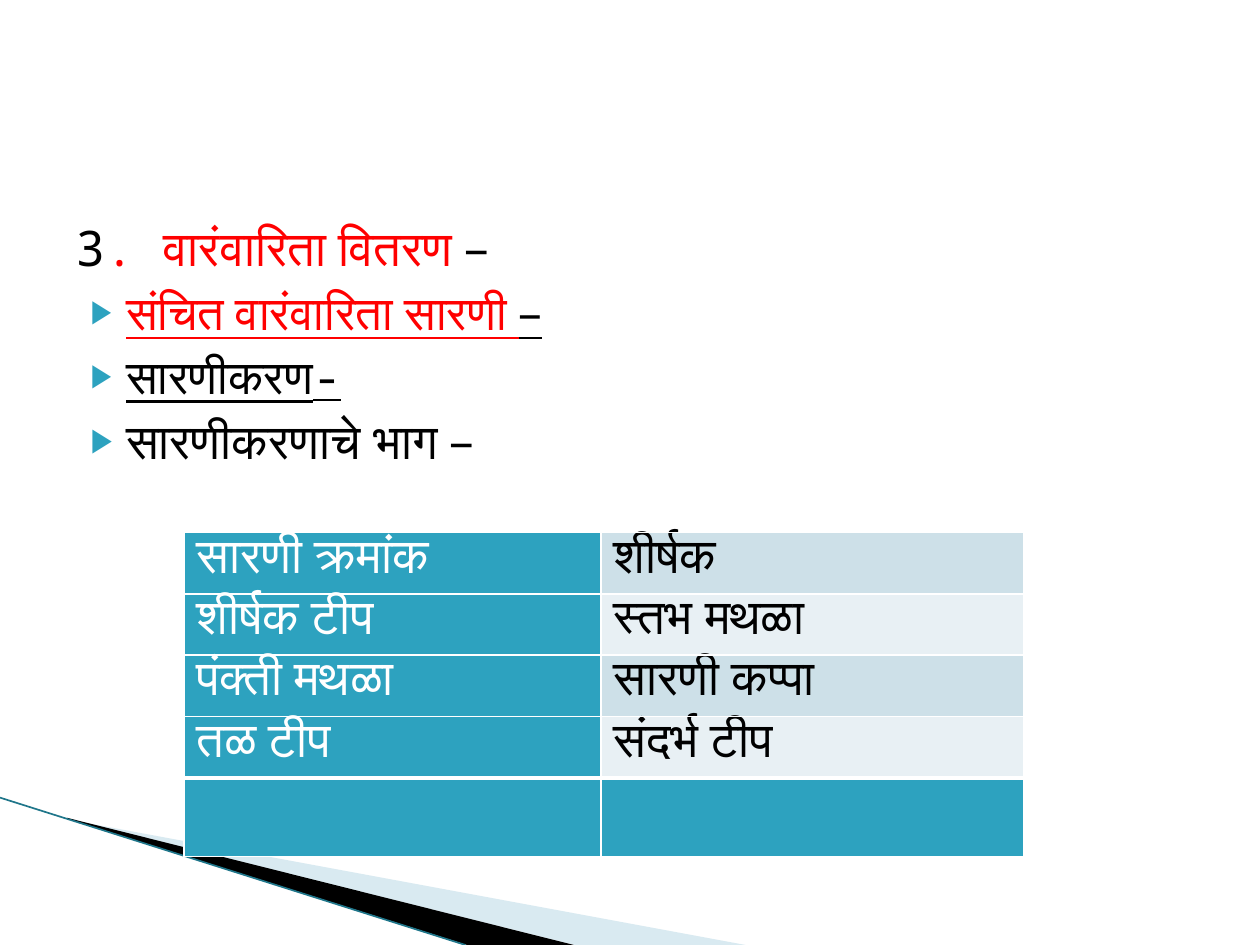
from lxml import etree
from pptx import Presentation
from pptx.dml.color import RGBColor
from pptx.enum.shapes import MSO_CONNECTOR
from pptx.enum.text import MSO_ANCHOR, MSO_AUTO_SIZE
from pptx.oxml import parse_xml
from pptx.oxml.ns import nsdecls, qn
from pptx.util import Pt

BLACK = RGBColor(0x00, 0x00, 0x00)
WHITE = RGBColor(0xFF, 0xFF, 0xFF)
RED = RGBColor(0xFF, 0x00, 0x00)
TEAL = RGBColor(0x2D, 0xA2, 0xBF)
DARK_TEAL = RGBColor(0x1F, 0x76, 0x8A)
PALE_BLUE = RGBColor(0xA0, 0xCB, 0xDC)
BAND_DARK = RGBColor(0xCD, 0xE0, 0xE8)
BAND_LIGHT = RGBColor(0xE8, 0xF0, 0xF4)

LIST = [
    (False, [("3", 28, BLACK, False), (". वारंवारिता वितरण ", 28, RED, False),
             ("–", 28, BLACK, False)]),
    (True, [("संचित वारंवारिता सारणी ", 27, RED, True), ("–", 27, BLACK, True)]),
    (True, [("सारणीकरण-", 27, BLACK, True)]),
    (True, [("सारणीकरणाचे भाग –", 28, BLACK, False)]),
]
TABLE_PARTS = [
    ("सारणी क्रमांक", "शीर्षक"),
    ("शीर्षक टीप", "स्तभ मथळा"),
    ("पंक्ती मथळा", "सारणी कप्पा"),
    ("तळ टीप", "संदर्भ टीप"),
    ("", ""),
]


class SlideBuilder:
    font = "Noto Sans Mono"

    def __init__(self, slide):
        self.s = slide

    def run(self, p, text, size, color, underline=False):
        r = p.add_run()
        r.text = text
        r.font.name = self.font
        r.font.size = Pt(size)
        r.font.color.rgb = color
        r.font.bold = False
        r.font.underline = underline

    def polygon(self, points, color, opacity=100):
        (x, y), *rest = [(Pt(x), Pt(y)) for x, y in points]
        builder = self.s.shapes.build_freeform(x, y)
        builder.add_line_segments(rest)
        sp = builder.convert_to_shape()
        sp.shadow.inherit = False
        sp.line.fill.background()
        sp.fill.solid()
        sp.fill.fore_color.rgb = color
        if opacity < 100:
            clr = sp.fill._xPr.find(".//" + qn("a:srgbClr"))
            etree.SubElement(clr, qn("a:alpha")).set("val", str(opacity * 1000))

    def line(self, x1, y1, x2, y2, color, width):
        c = self.s.shapes.add_connector(
            MSO_CONNECTOR.STRAIGHT, Pt(x1), Pt(y1), Pt(x2), Pt(y2))
        c.line.color.rgb = color
        c.line.width = Pt(width)
        etree.SubElement(c._element.spPr, qn("a:effectLst"))

    def bullet(self, p, shown):
        pPr = p._p.get_or_add_pPr()
        pPr.set("marL", str(Pt(28.8) if shown else 0))
        pPr.set("indent", str(Pt(-20.2) if shown else 0))
        if not shown:
            etree.SubElement(pPr, qn("a:buNone"))
            return
        clr = etree.SubElement(pPr, qn("a:buClr"))
        etree.SubElement(clr, qn("a:srgbClr")).set("val", str(TEAL))
        etree.SubElement(pPr, qn("a:buSzPct")).set("val", "68000")
        etree.SubElement(pPr, qn("a:buChar")).set("char", "▶")

    def body(self, x, y, w, h, items):
        sp = self.s.placeholders[1]
        sp.left, sp.top, sp.width, sp.height = Pt(x), Pt(y), Pt(w), Pt(h)
        tf = sp.text_frame
        tf.word_wrap = True
        tf.auto_size = MSO_AUTO_SIZE.NONE
        tf.vertical_anchor = MSO_ANCHOR.TOP
        tf.margin_top = Pt(7.6)
        for i, (bulleted, runs) in enumerate(items):
            p = tf.add_paragraph() if i else tf.paragraphs[0]
            self.bullet(p, bulleted)
            p.space_before = Pt(4 if i else 0)
            for run in runs:
                self.run(p, *run)

    def borders(self, cell, top, bottom):
        tcPr = cell._tc.get_or_add_tcPr()
        widths = {"lnL": 1, "lnR": 1, "lnT": top, "lnB": bottom}
        for i, (tag, width) in enumerate(widths.items()):
            tcPr.insert(i, parse_xml(
                f'<a:{tag} {nsdecls("a")} w="{Pt(width)}"><a:solidFill>'
                f'<a:srgbClr val="{WHITE}"/></a:solidFill></a:{tag}>'))

    def table(self, x, y, widths, heights, rows):
        """Draw a teal first column, banded second column and teal total row."""
        table = self.s.shapes.add_table(
            len(rows), len(widths), Pt(x), Pt(y),
            Pt(sum(widths)), Pt(sum(heights))).table
        for col, width in zip(table.columns, widths):
            col.width = Pt(width)
        last = len(rows) - 1
        for i, texts in enumerate(rows):
            table.rows[i].height = Pt(heights[i])
            for j, text in enumerate(texts):
                cell = table.cell(i, j)
                cell.margin_top = cell.margin_bottom = Pt(1)
                banded = j == 1 and i < last
                cell.fill.solid()
                cell.fill.fore_color.rgb = (
                    (BAND_DARK, BAND_LIGHT)[i % 2] if banded else TEAL)
                self.borders(cell, 3 if i == last else 1,
                             3 if i == last - 1 else 1)
                if text:
                    self.run(cell.text_frame.paragraphs[0], text, 28,
                             BLACK if banded else WHITE)


def main():
    prs = Presentation()
    prs.slide_width, prs.slide_height = Pt(720), Pt(540)
    s = prs.slides.add_slide(prs.slide_layouts[1])
    title = s.shapes.title._element
    title.getparent().remove(title)

    b = SlideBuilder(s)
    b.polygon([(39.6, 468.5), (426, 540), (328.3, 540), (39.6, 468)], PALE_BLUE, 40)
    b.polygon([(38.2, 467.3), (328, 540), (267, 540), (38.9, 468)], BLACK)
    b.line(0, 455.8, 266, 540, DARK_TEAL, 0.95)
    b.body(36, 116.6, 648, 356.4, LIST)
    b.table(105.1, 304.2, [238.3, 241.9], [35.1] * 4 + [45], TABLE_PARTS)
    prs.save("out.pptx")


if __name__ == "__main__":
    main()
